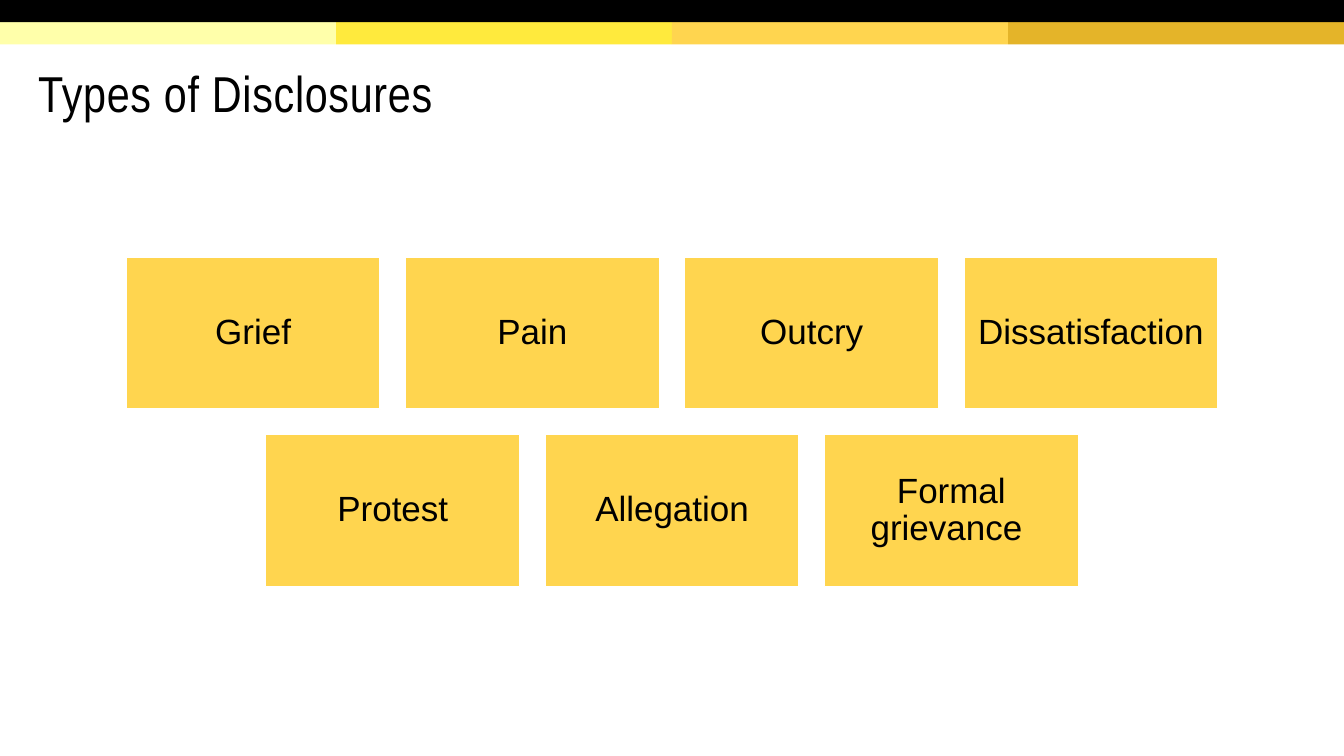
from pptx import Presentation
from pptx.dml.color import RGBColor
from pptx.enum.shapes import MSO_SHAPE
from pptx.enum.text import MSO_ANCHOR, PP_ALIGN
from pptx.util import Inches, Pt

TITLE = "Types of Disclosures"
DISCLOSURE_ROWS = [
    ["Grief", "Pain", "Outcry", "Dissatisfaction"],
    ["Protest", "Allegation", "Formal grievance "],
]
BAND_COLORS = ["FFFFAA", "FFEA3D", "FFD54F", "E4B429"]
BLACK, WHITE, TILE_COLOR = "000000", "FFFFFF", "FFD54F"

SLIDE_WIDTH, SLIDE_HEIGHT = 13.33, 7.5
BAR_HEIGHT = 0.22
TILE_WIDTH, TILE_HEIGHT, TILE_GAP = 2.52, 1.51, 0.25
TILES_TOP = 2.55


def color(value):
    return RGBColor.from_string(value)


def add_rectangle(slide, left, top, width, height, fill, line=None):
    shape = slide.shapes.add_shape(
        MSO_SHAPE.RECTANGLE, Inches(left), Inches(top), Inches(width), Inches(height)
    )
    shape.shadow.inherit = False
    shape.fill.solid()
    shape.fill.fore_color.rgb = color(fill)
    if line:
        shape.line.color.rgb = color(line)
        shape.line.width = Pt(1)
    else:
        shape.line.fill.background()
    return shape


def write_text(shape, text, size, font, align, line_spacing, inset=0.1, spacing=0):
    frame = shape.text_frame
    frame.word_wrap = True
    frame.vertical_anchor = MSO_ANCHOR.MIDDLE
    frame.margin_left = frame.margin_right = Inches(inset)
    frame.margin_top = frame.margin_bottom = Inches(inset)
    paragraph = frame.paragraphs[0]
    paragraph.alignment = align
    paragraph.line_spacing = line_spacing
    run = paragraph.add_run()
    run.text = text
    run.font.size = Pt(size)
    run.font.name = font
    run.font.color.rgb = color(BLACK)
    if spacing:
        run.font._element.set("spc", str(int(spacing * 100)))


def main():
    presentation = Presentation()
    presentation.slide_width = Inches(SLIDE_WIDTH)
    presentation.slide_height = Inches(SLIDE_HEIGHT)
    slide = presentation.slides.add_slide(presentation.slide_layouts[6])

    band_width = SLIDE_WIDTH / len(BAND_COLORS)
    for index, fill in enumerate(BAND_COLORS):
        add_rectangle(slide, index * band_width, BAR_HEIGHT, band_width, BAR_HEIGHT, fill)
    add_rectangle(slide, 0, 0, SLIDE_WIDTH, BAR_HEIGHT, BLACK)

    title = slide.shapes.add_textbox(Inches(0.28), Inches(0.47), Inches(12.65), Inches(0.98))
    write_text(title, TITLE, size=36, font="Arial Narrow", align=PP_ALIGN.LEFT,
               line_spacing=0.85, spacing=0.5)

    for row, labels in enumerate(DISCLOSURE_ROWS):
        row_width = len(labels) * (TILE_WIDTH + TILE_GAP) - TILE_GAP
        row_left = (SLIDE_WIDTH - row_width) / 2
        top = TILES_TOP + row * (TILE_HEIGHT + TILE_GAP)
        for column, label in enumerate(labels):
            left = row_left + column * (TILE_WIDTH + TILE_GAP)
            tile = add_rectangle(slide, left, top, TILE_WIDTH, TILE_HEIGHT, TILE_COLOR, WHITE)
            write_text(tile, label, size=25, font="Arial", align=PP_ALIGN.CENTER,
                       line_spacing=0.9)

    presentation.save("out.pptx")


if __name__ == "__main__":
    main()
